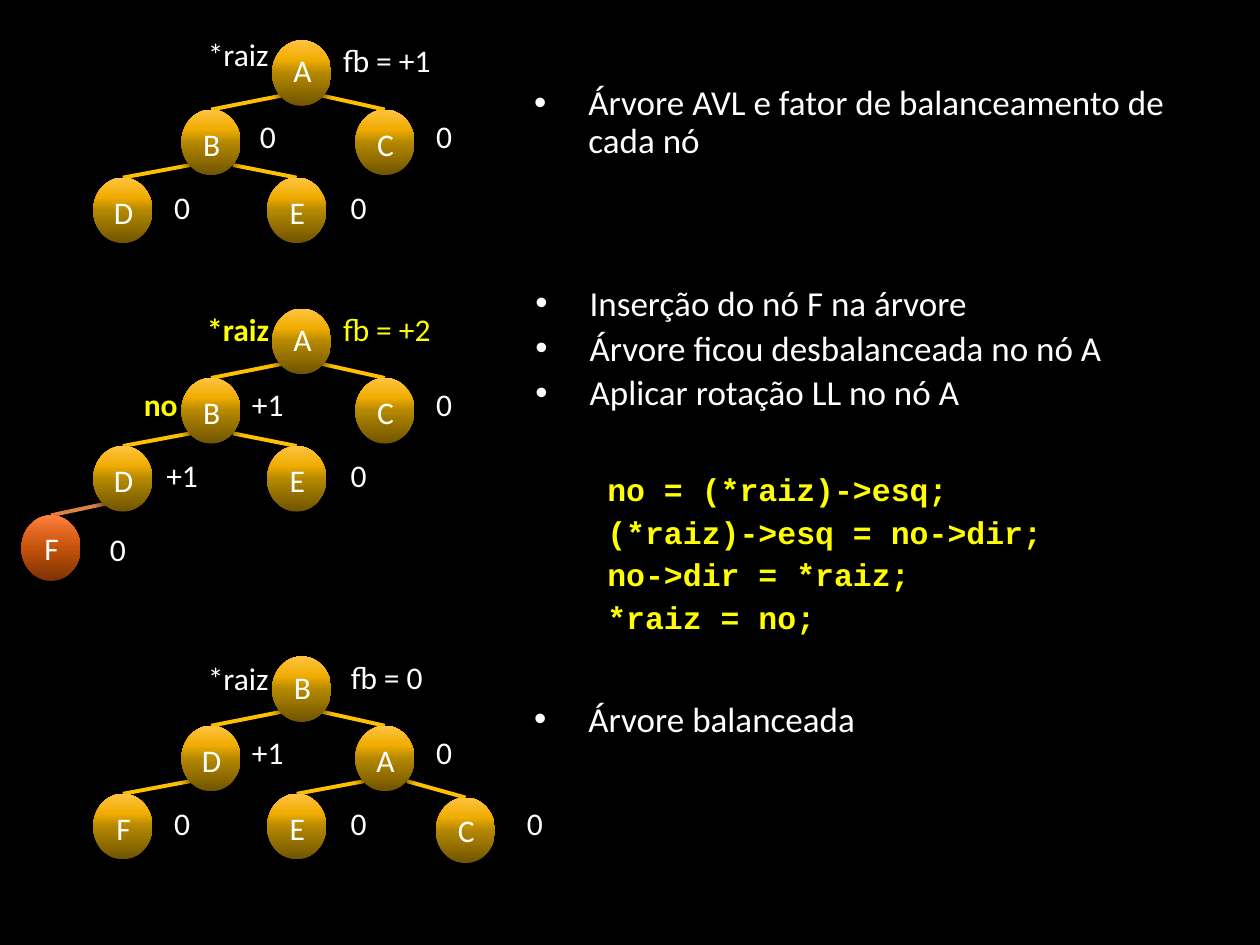
import lxml.etree
import pptx
import pptx.dml.color
import pptx.enum.shapes
import pptx.enum.text
import pptx.oxml.ns
import pptx.util

Inches = pptx.util.Inches
Pt = pptx.util.Pt
qn = pptx.oxml.ns.qn

THEME = {
    "background": "000000", "text": "FFFFFF", "accent": "FFFF00",
    "font": "Calibri", "code_font": "Courier New",
    "label_size": 18, "bullet_size": 20, "edge_width": 2.25,
    "gold": {"stops": [(0, "705400"), (50, "B48800"), (70, "F0AC00"), (100, "FFC342")],
             "edge": "FFC000"},
    "orange": {"stops": [(0, "7D3203"), (50, "C4520B"), (70, "DB631C"), (100, "FF803C")],
               "edge": "DF8045"},
}
LABEL = {"name": THEME["font"], "size": THEME["label_size"], "color": THEME["text"], "bold": False}
ALERT = LABEL | {"color": THEME["accent"]}
POINTER = ALERT | {"bold": True}
BULLET = LABEL | {"size": THEME["bullet_size"]}
CODE = POINTER | {"name": THEME["code_font"]}

# Tree slots: left, drop below the root, parent, edge start in the parent,
# letter drop, balance offset
NODE_WIDTH, NODE_HEIGHT = 0.47, 0.52
EDGE_DROP = 0.44
SLOTS = {
    "root": (2.16, 0, None, 0, 0.04, (0.4, -0.04)),
    "L": (1.44, 0.55, "root", 0.07, 0.07, (0.43, 0.01)),
    "R": (2.82, 0.55, "root", 0.4, 0.07, (0.45, 0.01)),
    "LL": (0.74, 1.09, "L", 0.07, 0.07, (0.45, 0.03)),
    "LR": (2.12, 1.09, "L", 0.41, 0.07, (0.47, 0.03)),
    "RL": (2.12, 1.09, "R", 0.07, 0.07, (0.47, 0.03)),
    "RR": (3.46, 1.12, "R", 0.41, 0.06, (0.53, 0)),
    "LLL": (0.17, 1.64, "LL", 0.18, 0.06, (0.51, 0.07)),
}

# Trees: root top, slot -> (letter, balance)
TREES = [
    (0.32, {"root": ("A", "fb = +1"), "L": ("B", "0"), "R": ("C", "0"),
            "LL": ("D", "0"), "LR": ("E", "0")}),
    (2.45, {"root": ("A", "fb = +2"), "L": ("B", "+1"), "R": ("C", "0"),
            "LL": ("D", "+1"), "LR": ("E", "0"), "LLL": ("F", "0")}),
    (5.21, {"root": ("B", "fb = 0"), "L": ("D", "+1"), "R": ("A", "0"),
            "LL": ("F", "0"), "RL": ("E", "0"), "RR": ("C", "0")}),
]

# Pointer labels: text, left, top, width, format
POINTERS = [
    ("*raiz", 1.38, 0.23, 1.02, LABEL),
    ("*raiz", 1.38, 2.41, 1.02, POINTER),
    ("*raiz", 1.38, 5.18, 1.02, LABEL),
    ("no", 0.92, 3.01, 0.71, POINTER),
]

# Notes: left, top, height, bullets, code lines
NOTES = [
    (4.24, 0.68, 0.61, ["Árvore AVL e fator de balanceamento de cada nó"], []),
    (4.25, 2.27, 2.82,
     ["Inserção do nó F na árvore", "Árvore ficou desbalanceada no nó A",
      "Aplicar rotação LL no nó A"],
     ["no = (*raiz)->esq;", "(*raiz)->esq = no->dir;", "no->dir = *raiz;", "*raiz = no;"]),
    (4.24, 5.57, 0.3, ["Árvore balanceada"], []),
]
NOTE_WIDTH, BULLET_INDENT, CODE_INDENT = 5.34, 0.43, 0.57
BULLET_GAP, CODE_GAP, CODE_START_GAP = 4, 4.8, 35


def rgb(value):
    return pptx.dml.color.RGBColor.from_string(value)


def set_font(font, style):
    values = {"name": style["name"], "size": Pt(style["size"]), "bold": style["bold"]}
    for key, value in values.items():
        setattr(font, key, value)
    font.color.rgb = rgb(style["color"])


def add_box(shapes, left, top, width, height):
    box = shapes.add_textbox(Inches(left), Inches(top), Inches(width), Inches(height))
    box.text_frame.word_wrap = True
    box.text_frame.auto_size = pptx.enum.text.MSO_AUTO_SIZE.SHAPE_TO_FIT_TEXT
    return box.text_frame


def add_label(shapes, text, left, top, width, style):
    para = add_box(shapes, left, top, width, 0.4).paragraphs[0]
    para.alignment = pptx.enum.text.PP_ALIGN.CENTER
    span = para.add_run()
    span.text = text
    set_font(span.font, style)


def add_color(parent, value):
    return lxml.etree.SubElement(parent, qn("a:srgbClr"), val=value)


def add_node(shapes, left, top, palette):
    node = shapes.add_shape(pptx.enum.shapes.MSO_SHAPE.OVAL, Inches(left), Inches(top),
                            Inches(NODE_WIDTH), Inches(NODE_HEIGHT))
    node.line.fill.background()
    node.fill.gradient()
    node.fill.gradient_angle = 90
    properties = node._element.spPr
    stops = properties.find(".//" + qn("a:gsLst"))
    for stop in list(stops):
        stops.remove(stop)
    for position, value in palette["stops"]:
        add_color(lxml.etree.SubElement(stops, qn("a:gs"), pos=str(position * 1000)), value)
    node.shadow.inherit = False
    shadow = lxml.etree.SubElement(properties.find(qn("a:effectLst")), qn("a:outerShdw"),
                                   blurRad=str(Pt(5)), dist=str(Pt(3)), dir="5400000")
    lxml.etree.SubElement(add_color(shadow, "000000"), qn("a:alpha"), val="45000")


def add_edge(shapes, start, end, color):
    edge = shapes.add_connector(pptx.enum.shapes.MSO_CONNECTOR.STRAIGHT,
                                *(Inches(value) for value in start + end))
    edge.line.color.rgb = rgb(color)
    edge.line.width = Pt(THEME["edge_width"])
    lxml.etree.SubElement(edge._element.spPr, qn("a:effectLst"))


def add_tree(page, root_top, nodes):
    shapes = page.shapes.add_group_shape().shapes
    palettes = {slot: THEME["orange" if slot == "LLL" else "gold"] for slot in nodes}
    # Edges lie behind the nodes
    for slot in nodes:
        left, drop, parent, edge_start, _, _ = SLOTS[slot]
        if parent:
            parent_left, parent_drop = SLOTS[parent][:2]
            start = (parent_left + edge_start, root_top + parent_drop + EDGE_DROP)
            end = (left + NODE_WIDTH / 2, root_top + drop)
            add_edge(shapes, start, end, palettes[slot]["edge"])
    # Nodes, letters and balance factors
    for slot, (letter, balance) in nodes.items():
        left, drop, _, _, letter_drop, (shift, rise) = SLOTS[slot]
        top = root_top + drop
        add_node(shapes, left, top, palettes[slot])
        add_label(shapes, letter, left - 0.15, top + letter_drop, 0.78, LABEL)
        add_label(page.shapes, balance, left + shift, top + rise,
                  1.02 if slot == "root" else 0.51, ALERT if balance == "fb = +2" else LABEL)


def add_note(page, left, top, height, bullets, code):
    frame = add_box(page.shapes, left, top, NOTE_WIDTH, height)
    for side in ("left", "top", "right", "bottom"):
        setattr(frame, "margin_" + side, 0)
    lines = [(text, BULLET, BULLET_GAP if index else 0) for index, text in enumerate(bullets)]
    lines += [(text, CODE, CODE_GAP if index else CODE_START_GAP)
              for index, text in enumerate(code)]
    for index, (text, style, gap) in enumerate(lines):
        para = frame.add_paragraph() if index else frame.paragraphs[0]
        para.line_spacing = 0.9
        para.space_before = Pt(gap)
        properties = para._p.get_or_add_pPr()
        if style is BULLET:
            properties.set("marL", str(Inches(BULLET_INDENT)))
            properties.set("indent", str(-Inches(BULLET_INDENT)))
            lxml.etree.SubElement(properties, qn("a:buFont"), typeface="Arial")
            lxml.etree.SubElement(properties, qn("a:buChar"), char="•")
        else:
            para.level = 1
            properties.set("marL", str(Inches(CODE_INDENT)))
            properties.set("indent", "0")
        span = para.add_run()
        span.text = text
        set_font(span.font, style)


def main():
    deck = pptx.Presentation()
    deck.slide_width, deck.slide_height = Inches(10), Inches(7.5)
    page = deck.slides.add_slide(deck.slide_layouts[6])
    page.background.fill.solid()
    page.background.fill.fore_color.rgb = rgb(THEME["background"])
    for tree in TREES:
        add_tree(page, *tree)
    for note in NOTES:
        add_note(page, *note)
    for pointer in POINTERS:
        add_label(page.shapes, *pointer)
    deck.save("out.pptx")


if __name__ == "__main__":
    main()
